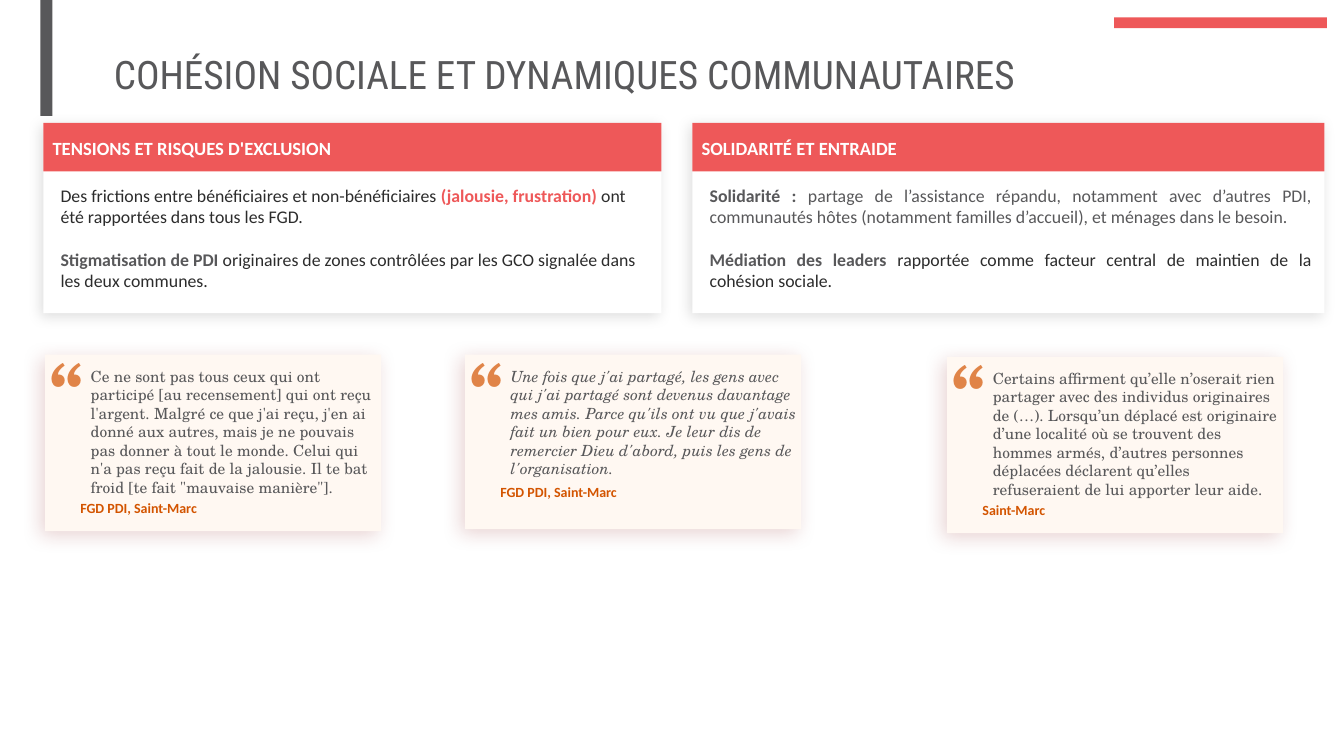
from dataclasses import dataclass

from lxml import etree
from pptx import Presentation
from pptx.dml.color import RGBColor
from pptx.enum.shapes import MSO_SHAPE
from pptx.enum.text import MSO_ANCHOR, MSO_AUTO_SIZE, PP_ALIGN
from pptx.oxml.ns import qn
from pptx.util import Pt

RECT = MSO_SHAPE.RECTANGLE
MIDDLE, TOP = MSO_ANCHOR.MIDDLE, MSO_ANCHOR.TOP
LEFT, JUSTIFY = PP_ALIGN.LEFT, PP_ALIGN.JUSTIFY


@dataclass(frozen=True)
class Theme:
    red: str = "EE5859"
    grey: str = "58585A"
    ink: str = "2C2C2C"
    orange: str = "D35400"
    cream: str = "FFF8F2"
    white: str = "FFFFFF"
    panel_shadow: tuple = ("000000", 13, 10, 3)
    card_shadow: tuple = ("8B1A1A", 18, 14, 4)
    title_font: str = "Roboto Condensed"
    body_font: str = "Calibri"
    quote_font: str = "TeX Gyre Schola"
    title_size: float = 28
    header_size: float = 13.3
    body_size: float = 12.7
    quote_size: float = 11
    source_size: float = 10
    mark_size: float = 48


T = Theme()


def add_alpha(color, percent):
    etree.SubElement(color, qn("a:alpha")).set("val", str(percent * 1000))


def add_rect(shapes, box, fill, shadow=None):
    sp = shapes.add_shape(RECT, *map(Pt, box))
    sp.shadow.inherit = False
    sp.fill.solid()
    sp.fill.fore_color.rgb = RGBColor.from_string(fill)
    sp.line.fill.background()
    if shadow:
        color, alpha, blur, dist = shadow
        effects = sp._element.spPr.find(qn("a:effectLst"))
        outer = etree.SubElement(effects, qn("a:outerShdw"))
        outer.set("blurRad", str(Pt(blur)))
        outer.set("dist", str(Pt(dist)))
        outer.set("dir", str(135 * 60000))
        outer.set("rotWithShape", "0")
        clr = etree.SubElement(outer, qn("a:srgbClr"))
        clr.set("val", color)
        add_alpha(clr, alpha)
    return sp


def style_run(r, font, size, color, bold=False, italic=False):
    r.font.name, r.font.size = font, Pt(size)
    r.font.bold, r.font.italic = bold, italic
    r.font.color.rgb = RGBColor.from_string(color)


def add_box(shapes, box, inset=0, anchor=TOP):
    tf = shapes.add_textbox(*map(Pt, box)).text_frame
    tf.word_wrap = True
    tf.vertical_anchor = anchor
    tf.margin_left = tf.margin_top = tf.margin_right = tf.margin_bottom = Pt(inset)
    return tf


def add_line(shapes, box, text, font, size, color, inset=0, anchor=MIDDLE,
             bold=True, italic=False):
    tf = add_box(shapes, box, inset, anchor)
    tf.text = text
    r = tf.paragraphs[0].runs[0]
    style_run(r, font, size, color, bold, italic)
    return r


def add_title(s, box, text):
    title = s.shapes.title
    title.left, title.top, title.width, title.height = map(Pt, box)
    tf = title.text_frame
    tf.text = text
    tf.word_wrap = True
    tf.auto_size = MSO_AUTO_SIZE.NONE
    tf.vertical_anchor = MIDDLE
    p = tf.paragraphs[0]
    p.alignment, p.line_spacing = LEFT, 0.9
    style_run(p.runs[0], T.title_font, T.title_size, T.grey)


def add_panel(s, box, header, paragraphs, align):
    x, y, w, h = box
    header_h = 34.6
    add_rect(s.shapes, box, T.white, T.panel_shadow)
    add_rect(s.shapes, (x, y, w, header_h), T.red)
    add_line(s.shapes, (x + 6.5, y + 3.6, w - 10, 28.8), header,
             T.body_font, T.header_size, T.white)
    tf = add_box(s.shapes, (x + 9.4, y + 41, w - 15.4, h - 50), 2.9)
    for i, runs in enumerate(paragraphs):
        p = tf.paragraphs[0] if i == 0 else tf.add_paragraph()
        p.alignment = align
        if i:
            p.space_before = Pt(15.5)
        for text, color, bold in runs:
            r = p.add_run()
            r.text = text
            style_run(r, T.body_font, T.body_size, color, bold)


def add_quote(s, box, quote, source, source_top, italic):
    x, y, w, h = box
    shapes = s.shapes.add_group_shape().shapes
    add_rect(shapes, box, T.cream, T.card_shadow)
    mark = add_line(shapes, (x + 3.8, y - 3.6, 57.6, 52.6), "“",
                    T.quote_font, T.mark_size, T.orange)
    add_alpha(mark._r.find(".//" + qn("a:srgbClr")), 70)
    add_line(shapes, (x + 29.7, y + 5.8, w - 29.7, source_top - 2), quote,
             T.quote_font, T.quote_size, T.grey, 2.9, TOP, False, italic)
    add_line(shapes, (x + 25.2, y + source_top, w - 14.6, 28.8), source,
             T.body_font, T.source_size, T.orange)


PANELS = [
    ((31, 87.8, 441.4, 136), "TENSIONS ET RISQUES D'EXCLUSION", [
        [("Des frictions entre bénéficiaires et non-bénéficiaires ", T.ink, False),
         ("(jalousie, frustration) ", T.red, True),
         ("ont été rapportées dans tous les FGD.", T.ink, False)],
        [("Stigmatisation de PDI ", T.grey, True),
         ("originaires de zones contrôlées par les GCO signalée dans les deux "
          "communes.", T.ink, False)],
    ], LEFT),
    ((494.6, 87.8, 451.4, 136), "SOLIDARITÉ ET ENTRAIDE", [
        [("Solidarité : ", T.grey, True),
         ("partage de l’assistance répandu, notamment avec d’autres PDI, "
          "communautés hôtes (notamment familles d’accueil), et ménages dans "
          "le besoin.", T.grey, False)],
        [("Médiation des leaders ", T.grey, True),
         ("rapportée comme facteur central de maintien de la cohésion sociale.",
          T.ink, False)],
    ], JUSTIFY),
]

QUOTES = [
    ((32.2, 253.4, 240, 126),
     "Ce ne sont pas tous ceux qui ont participé [au recensement] qui ont reçu "
     "l'argent. Malgré ce que j'ai reçu, j'en ai donné aux autres, mais je ne "
     "pouvais pas donner à tout le monde. Celui qui n'a pas reçu fait de la "
     "jalousie. Il te bat froid [te fait \"mauvaise manière\"].",
     "FGD PDI, Saint-Marc", 95, False),
    ((332.2, 253.4, 240, 124.6),
     "Une fois que j'ai partagé, les gens avec qui j'ai partagé sont devenus "
     "davantage mes amis. Parce qu'ils ont vu que j'avais fait un bien pour eux. "
     "Je leur dis de remercier Dieu d'abord, puis les gens de l'organisation.",
     "FGD PDI, Saint-Marc", 83.5, True),
    ((676.6, 254.9, 240, 126),
     "Certains affirment qu’elle n’oserait rien partager avec des individus "
     "originaires de (…). Lorsqu’un déplacé est originaire d’une localité où se "
     "trouvent des hommes armés, d’autres personnes déplacées déclarent qu’elles "
     "refuseraient de lui apporter leur aide.",
     "Saint-Marc", 95, False),
]


def main():
    prs = Presentation()
    prs.slide_width, prs.slide_height = Pt(960), Pt(540)
    s = prs.slides.add_slide(prs.slide_layouts[5])
    # Accent bars and title
    add_rect(s.shapes, (795.8, 12.4, 152, 7.8), T.red)
    add_rect(s.shapes, (28.8, 0, 8.6, 82.8), T.grey)
    add_title(s, (74.2, 20.9, 810.7, 68.4),
              "COHÉSION SOCIALE ET DYNAMIQUES COMMUNAUTAIRES")
    # Findings
    for panel in PANELS:
        add_panel(s, *panel)
    # Testimonies
    for quote in QUOTES:
        add_quote(s, *quote)
    prs.save("out.pptx")


if __name__ == "__main__":
    main()
